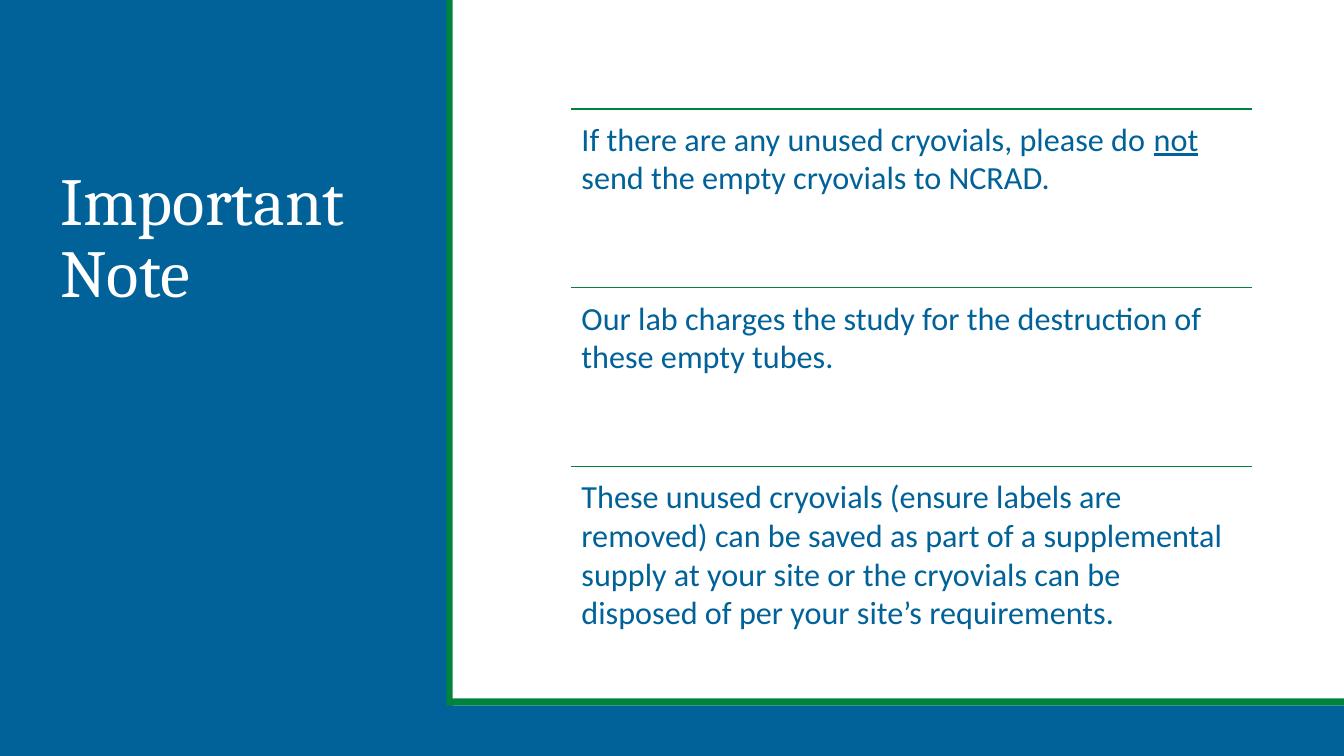
from dataclasses import dataclass

from lxml import etree
from pptx import Presentation
from pptx.dml.color import RGBColor
from pptx.enum.shapes import MSO_CONNECTOR, MSO_SHAPE
from pptx.enum.text import MSO_ANCHOR
from pptx.oxml.ns import qn
from pptx.util import Pt

RECTANGLE = MSO_SHAPE.RECTANGLE
STRAIGHT = MSO_CONNECTOR.STRAIGHT
TOP, BOTTOM = MSO_ANCHOR.TOP, MSO_ANCHOR.BOTTOM

BLUE, GREEN, WHITE = "006298", "00843D", "FFFFFF"
SLIDE_WIDTH, SLIDE_HEIGHT = 960, 540

NOTES_LEFT, NOTES_TOP, NOTES_WIDTH = 408.24, 77.76, 486
NOTE_PITCH = 127.8


@dataclass(frozen=True)
class Box:
    left: float
    top: float
    width: float
    height: float

    def in_points(self) -> list:
        return [Pt(v) for v in (self.left, self.top, self.width, self.height)]


@dataclass(frozen=True)
class Band:
    box: Box
    color: str


@dataclass(frozen=True)
class Piece:
    text: str
    underline: bool = False


@dataclass(frozen=True)
class TextStyle:
    font: str
    size: float
    color: str
    anchor: MSO_ANCHOR
    margin_x: float
    margin_y: float
    paragraph: dict


TITLE_STYLE = TextStyle("Cambria", 48, WHITE, BOTTOM, 7.2, 3.6,
                        {"line_spacing": 0.9})
NOTE_STYLE = TextStyle("Calibri", 23, BLUE, TOP, 7.2, 7.2,
                       {"space_after": Pt(8)})

BANDS = [
    Band(Box(318.24, 0, 5.04, SLIDE_HEIGHT), GREEN),
    Band(Box(0, 498.96, SLIDE_WIDTH, 5.04), GREEN),
    Band(Box(0, 504, SLIDE_WIDTH, 36), BLUE),
    Band(Box(0, 0, 318.96, SLIDE_HEIGHT), BLUE),
]

NOTES = [
    [
        Piece("If there are any unused cryovials, please do "),
        Piece("not", underline=True),
        Piece(" send the empty cryovials to NCRAD."),
    ],
    [Piece("Our lab charges the study for the destruction of these empty tubes.")],
    [Piece("These unused cryovials (ensure labels are removed) can be saved as "
           "part of a supplemental supply at your site or the cryovials can be "
           "disposed of per your site’s requirements.")],
]


def rgb(hex_color: str) -> RGBColor:
    return RGBColor.from_string(hex_color)


def apply(target, values: dict) -> None:
    """Set each named attribute of the target."""
    for name, value in values.items():
        setattr(target, name, value)


def add_band(slide, band: Band) -> None:
    shape = slide.shapes.add_shape(RECTANGLE, *band.box.in_points())
    shape.shadow.inherit = False
    shape.fill.solid()
    shape.fill.fore_color.rgb = rgb(band.color)
    shape.line.fill.background()


def add_rule(slide, left: float, top: float, width: float) -> None:
    rule = slide.shapes.add_connector(
        STRAIGHT, Pt(left), Pt(top), Pt(left + width), Pt(top))
    rule.line.color.rgb = rgb(GREEN)
    rule.line.width = Pt(1)
    etree.SubElement(rule.element.spPr, qn("a:effectLst"))


def add_text(slide, box: Box, pieces: list[Piece], style: TextStyle) -> None:
    frame = slide.shapes.add_textbox(*box.in_points()).text_frame
    apply(frame, {
        "word_wrap": True,
        "vertical_anchor": style.anchor,
        "margin_left": Pt(style.margin_x),
        "margin_right": Pt(style.margin_x),
        "margin_top": Pt(style.margin_y),
        "margin_bottom": Pt(style.margin_y),
    })
    paragraph = frame.paragraphs[0]
    apply(paragraph, style.paragraph)
    for piece in pieces:
        run = paragraph.add_run()
        run.text = piece.text
        apply(run.font, {"name": style.font, "size": Pt(style.size),
                         "underline": piece.underline})
        run.font.color.rgb = rgb(style.color)


def main() -> None:
    deck = Presentation()
    apply(deck, {"slide_width": Pt(SLIDE_WIDTH), "slide_height": Pt(SLIDE_HEIGHT)})
    slide = deck.slides.add_slide(deck.slide_layouts[6])

    for band in BANDS:
        add_band(slide, band)
    add_text(slide, Box(36, 46.8, 252, 180), [Piece("Important Note")], TITLE_STYLE)

    for index, pieces in enumerate(NOTES):
        top = NOTES_TOP + index * NOTE_PITCH
        add_rule(slide, NOTES_LEFT, top, NOTES_WIDTH)
        add_text(slide, Box(NOTES_LEFT, top, NOTES_WIDTH, NOTE_PITCH),
                 pieces, NOTE_STYLE)

    deck.save("out.pptx")


if __name__ == "__main__":
    main()
